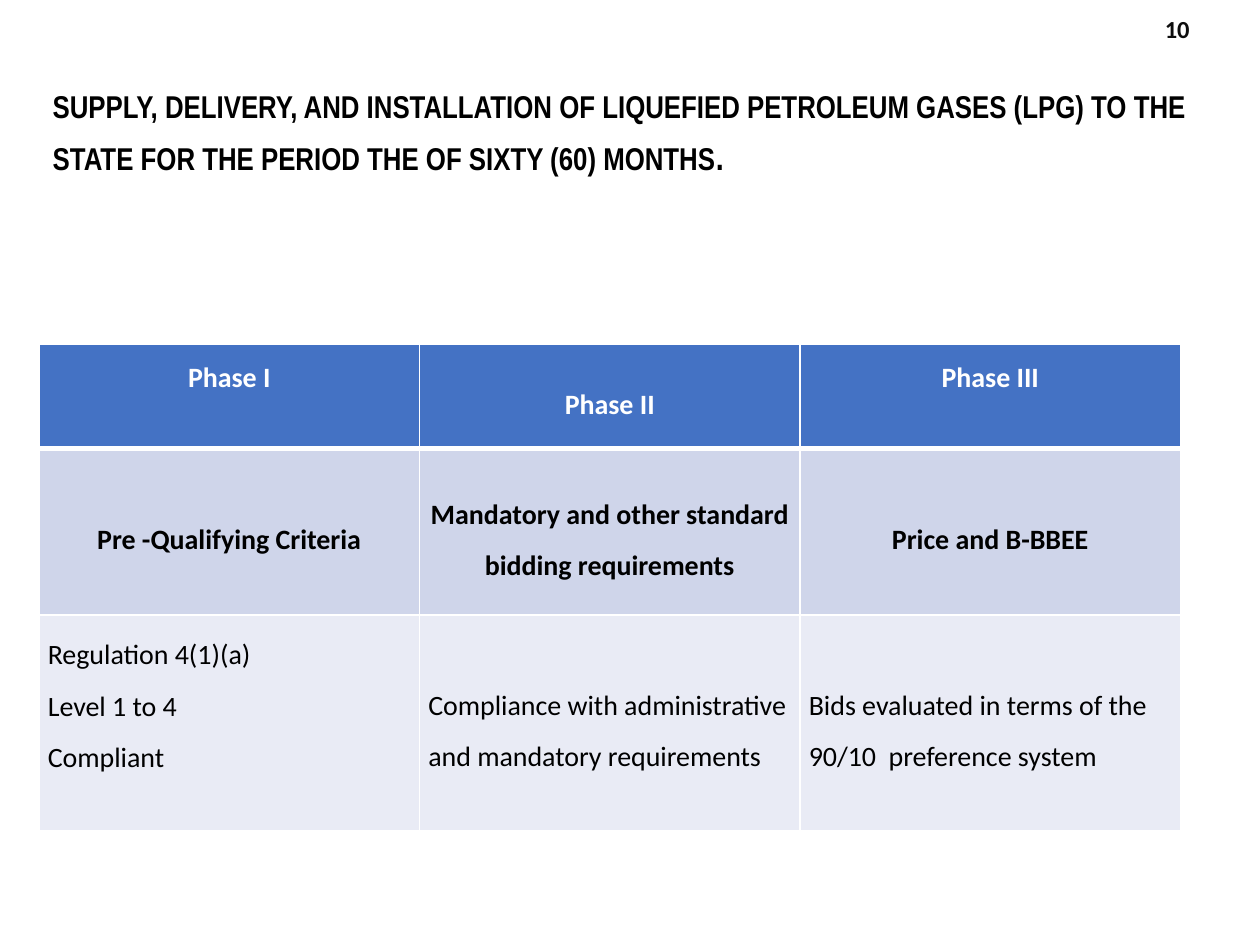
from lxml import etree
from pptx import Presentation
from pptx.dml.color import RGBColor
from pptx.enum.text import MSO_ANCHOR, PP_ALIGN
from pptx.oxml.ns import qn
from pptx.util import Inches, Pt

TOP, MIDDLE = MSO_ANCHOR.TOP, MSO_ANCHOR.MIDDLE
LEFT, CENTER, RIGHT = PP_ALIGN.LEFT, PP_ALIGN.CENTER, PP_ALIGN.RIGHT
COLORS = {"ink": "000000", "number": "0D0D0D", "white": "FFFFFF",
          "head": "4472C4", "band": "CFD5EA", "pale": "E9EBF5"}


def style(frame, size, color, bold, align, space, font="Calibri"):
    """Format every paragraph and run of a text frame."""
    for para in frame.paragraphs:
        para.alignment = align
        para.line_spacing = space
        for run in para.runs:
            run.font.name = font
            run.font.size = Pt(size)
            run.font.bold = bold
            run.font.color.rgb = RGBColor.from_string(COLORS[color])


def border(cell, side, width):
    """Draw one white cell edge; call before the cell is filled."""
    line = etree.SubElement(cell._tc.get_or_add_tcPr(), qn(f"a:ln{side}"),
                            w=str(Pt(width)))
    fill = etree.SubElement(line, qn("a:solidFill"))
    etree.SubElement(fill, qn("a:srgbClr"), val=COLORS["white"])


prs = Presentation()
prs.slide_width, prs.slide_height = Inches(10), Inches(7.5)
slide = prs.slides.add_slide(prs.slide_layouts[6])

# Page number
box = slide.shapes.add_textbox(Inches(9.1), 0, Inches(0.44), Inches(0.45))
frame = box.text_frame
frame.word_wrap = True
frame.vertical_anchor = MIDDLE
frame.text = "10"
style(frame, 14, "number", True, RIGHT, 1.0)

# Title
box = slide.shapes.add_textbox(Inches(0.32), Inches(0.68),
                               Inches(9.34), Inches(1.03))
frame = box.text_frame
frame.word_wrap = True
frame.vertical_anchor = MIDDLE
frame.margin_bottom = Inches(0.46)
frame.text = ("SUPPLY, DELIVERY, AND INSTALLATION OF LIQUEFIED PETROLEUM GASES "
              "(LPG) TO THE STATE FOR THE PERIOD THE OF SIXTY (60) MONTHS")
stop = frame.paragraphs[0].add_run()
stop.text = "."
style(frame, 18, "ink", True, LEFT, Pt(30), "Arial Narrow")
stop.font.size = Pt(20)

# Phases: height, fill, text colour, bold, alignment, texts
rows = [
    (0.83, "head", "white", True, CENTER,
     ["Phase I", "Phase II", "Phase III"]),
    (1.32, "band", "ink", True, CENTER,
     ["Pre -Qualifying Criteria",
      "Mandatory and other standard bidding requirements",
      "Price and B-BBEE"]),
    (1.71, "pale", "ink", False, LEFT,
     ["Regulation 4(1)(a)\nLevel 1 to 4\nCompliant",
      "Compliance with administrative and mandatory requirements",
      "Bids evaluated in terms of the 90/10  preference system"]),
]
high = {(0, 0), (0, 2), (2, 0)}  # cells whose text sits at the top

table = slide.shapes.add_table(3, 3, Inches(0.31), Inches(2.73),
                               Inches(9.06), Inches(3.86)).table
table.horz_banding = False
for col in table.columns:
    col.width = Inches(3.02)
for r, (height, fill, color, bold, align, texts) in enumerate(rows):
    table.rows[r].height = Inches(height)
    for c, text in enumerate(texts):
        cell = table.cell(r, c)
        cell.margin_left = cell.margin_right = Inches(0.07)
        cell.margin_top = Inches(0.05 if (r, c) == (2, 0) else 0)
        cell.margin_bottom = 0
        cell.vertical_anchor = TOP if (r, c) in high else MIDDLE
        for side in "LRTB":
            thick = (r, side) in ((0, "B"), (1, "T"))
            border(cell, side, 3 if thick else 1)
        cell.fill.solid()
        cell.fill.fore_color.rgb = RGBColor.from_string(COLORS[fill])
        cell.text_frame.text = text
        style(cell.text_frame, 16, color, bold, align, 1.5)

prs.save("out.pptx")
